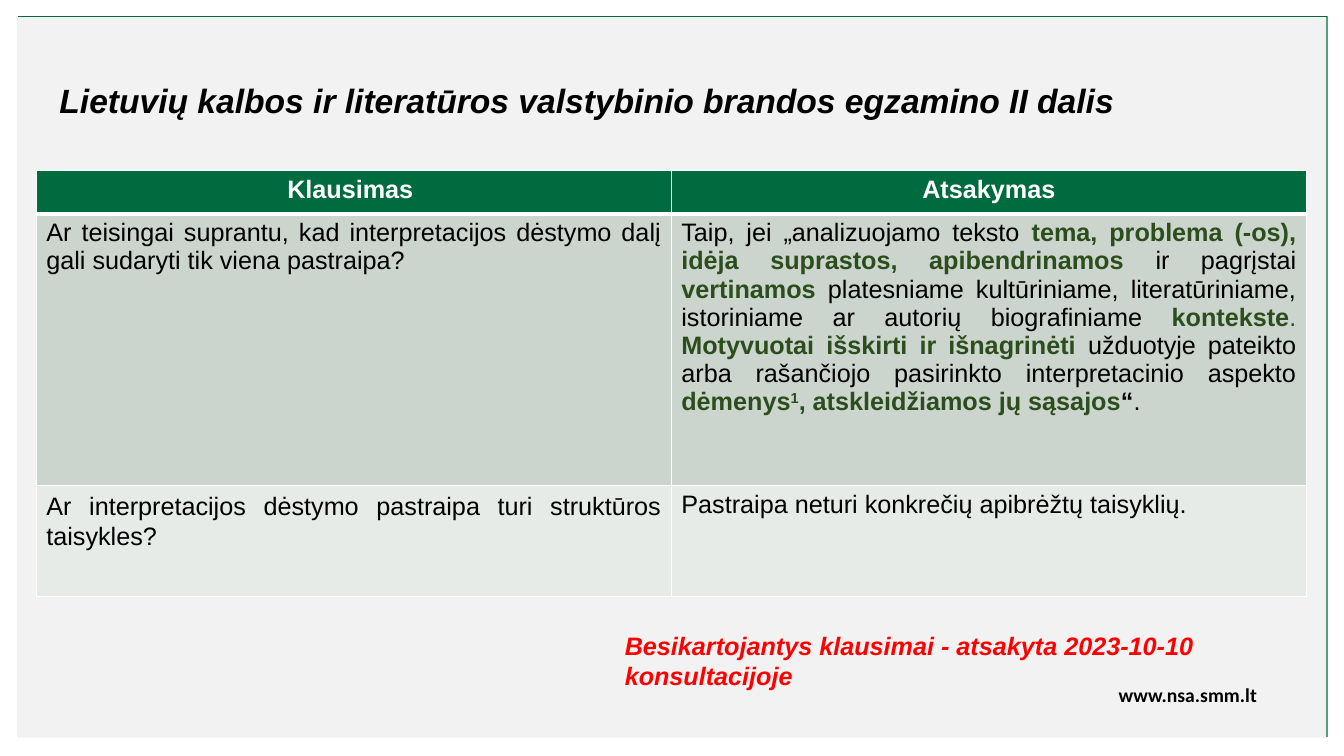
from typing import NamedTuple

from lxml.etree import SubElement
from pptx import Presentation
from pptx.dml.color import RGBColor
from pptx.enum.shapes import MSO_SHAPE
from pptx.enum.text import MSO_ANCHOR, MSO_AUTO_SIZE, PP_ALIGN
from pptx.oxml.ns import qn
from pptx.util import Pt

GREEN, DARK, GREY = "006B3E", "2C4E1C", "F2F2F2"
BLACK, WHITE, RED = "000000", "FFFFFF", "FF0000"


class Box(NamedTuple):
    left: float
    top: float
    width: float
    height: float


class Piece(NamedTuple):
    text: str
    color: str = BLACK
    bold: bool = False
    raised: bool = False


class Entry(NamedTuple):
    pieces: list[Piece]
    align: PP_ALIGN = PP_ALIGN.JUSTIFY
    spacing: dict = {}


class Line(NamedTuple):
    text: str
    box: Box
    color: str
    font: dict
    align: PP_ALIGN = PP_ALIGN.LEFT


class Row(NamedTuple):
    height: float
    fill: str
    bottom: float
    cells: list[Entry]


def key(text: str, raised: bool = False) -> Piece:
    return Piece(text, DARK, True, raised)


def head(text: str) -> Entry:
    return Entry([Piece(text, WHITE, True)], PP_ALIGN.CENTER)


def rgb(code: str) -> RGBColor:
    return RGBColor.from_string(code)


def apply(target, values: dict) -> None:
    for name, value in values.items():
        setattr(target, name, value)


def place(shape, box: Box) -> None:
    apply(shape, {name: Pt(value) for name, value in box._asdict().items()})


def add_panel(slide, box: Box, color: str) -> None:
    panel = slide.shapes.add_shape(MSO_SHAPE.RECTANGLE, *map(Pt, box))
    panel.shadow.inherit = False
    panel.fill.solid()
    panel.fill.fore_color.rgb = rgb(color)
    panel.line.fill.background()


def write_line(shape, line: Line) -> None:
    place(shape, line.box)
    frame = shape.text_frame
    apply(frame, {"word_wrap": True, "auto_size": MSO_AUTO_SIZE.NONE,
                  "vertical_anchor": MSO_ANCHOR.TOP})
    para = frame.paragraphs[0]
    para.alignment = line.align
    run = para.add_run()
    run.text = line.text
    apply(run.font, line.font)
    run.font.color.rgb = rgb(line.color)


def add_edges(cell, top: float, bottom: float) -> None:
    props = cell._tc.get_or_add_tcPr()
    for side, width in {"L": 1, "R": 1, "T": top, "B": bottom}.items():
        edge = SubElement(props, qn(f"a:ln{side}"), w=str(Pt(width)))
        fill = SubElement(edge, qn("a:solidFill"))
        SubElement(fill, qn("a:srgbClr"), val=WHITE)


def fill_cell(cell, entry: Entry, color: str) -> None:
    cell.fill.solid()
    cell.fill.fore_color.rgb = rgb(color)
    para = cell.text_frame.paragraphs[0]
    para.alignment = entry.align
    apply(para, entry.spacing)
    for piece in entry.pieces:
        run = para.add_run()
        run.text = piece.text
        apply(run.font, {"name": "Arial", "size": Pt(18), "bold": piece.bold})
        run.font.color.rgb = rgb(piece.color)
        if piece.raised:
            run._r.get_or_add_rPr().set("baseline", "30000")


def add_grid(slide, box: Box, rows: list[Row]) -> None:
    count = len(rows[0].cells)
    grid = slide.shapes.add_table(len(rows), count, *map(Pt, box)).table
    for column in grid.columns:
        column.width = Pt(box.width / count)
    top = 1
    for i, row in enumerate(rows):
        grid.rows[i].height = Pt(row.height)
        for j, entry in enumerate(row.cells):
            cell = grid.cell(i, j)
            add_edges(cell, top, row.bottom)
            fill_cell(cell, entry, row.fill)
        top = row.bottom


# Content
SLANT = {"name": "Arial", "bold": True, "italic": True}
TITLE = Line("Lietuvių kalbos ir literatūros valstybinio brandos egzamino II dalis",
             Box(35.3, 53.3, 799.2, 36), BLACK, {**SLANT, "size": Pt(24)})
LINES = [
    Line("www.nsa.smm.lt", Box(674.6, 484.6, 230.4, 24.5), BLACK,
         {"name": "Calibri", "bold": True, "size": Pt(14)}, PP_ALIGN.RIGHT),
    Line("Besikartojantys klausimai - atsakyta 2023-10-10 konsultacijoje",
         Box(439.2, 446.4, 480.2, 51.1), RED, {**SLANT, "size": Pt(18)}),
]
ANSWER = [
    Piece("Taip, jei „analizuojamo teksto "),
    key("tema, problema (-os), idėja suprastos, apibendrinamos"),
    Piece(" ir pagrįstai "),
    key("vertinamos"),
    Piece(" platesniame kultūriniame, literatūriniame, istoriniame ar autorių"
          " biografiniame "),
    key("kontekste"),
    Piece(". ", DARK),
    key("Motyvuotai išskirti ir išnagrinėti "),
    Piece("užduotyje pateikto arba rašančiojo pasirinkto interpretacinio aspekto "),
    key("dėmenys"),
    key("1", raised=True),
    key(", atskleidžiamos jų sąsajos"),
    Piece("“", bold=True),
    Piece("."),
]
ROWS = [
    Row(31, GREEN, 3, [head("Klausimas "), head("Atsakymas")]),
    Row(194.4, "CCD4CE", 1, [
        Entry([Piece("Ar teisingai suprantu, kad interpretacijos dėstymo dalį"
                     " gali sudaryti tik viena pastraipa?")]),
        Entry(ANSWER)]),
    Row(79.2, "E7EBE8", 1, [
        Entry([Piece("Ar interpretacijos dėstymo pastraipa turi struktūros taisykles?")],
              spacing={"line_spacing": 1.07, "space_after": Pt(8)}),
        Entry([Piece("Pastraipa neturi konkrečių apibrėžtų taisyklių.")],
              PP_ALIGN.LEFT)]),
]


def main() -> None:
    deck = Presentation()
    apply(deck, {"slide_width": Pt(960), "slide_height": Pt(540)})
    slide = deck.slides.add_slide(deck.slide_layouts.get_by_name("Title Only"))

    # Backdrop: the green panel shows as a thin edge
    add_panel(slide, Box(13, 11.5, 935.3, 514.8), GREEN)
    add_panel(slide, Box(12.2, 12.2, 935.3, 514.8), GREY)

    # Title, brought in front of the backdrop
    title = slide.shapes.title
    title.element.getparent().append(title.element)
    write_line(title, TITLE)

    # Questions and answers
    add_grid(slide, Box(25.9, 121.7, 907.2, 304.6), ROWS)

    # Note and web address
    for line in LINES:
        write_line(slide.shapes.add_textbox(*map(Pt, line.box)), line)

    deck.save("out.pptx")


if __name__ == "__main__":
    main()
